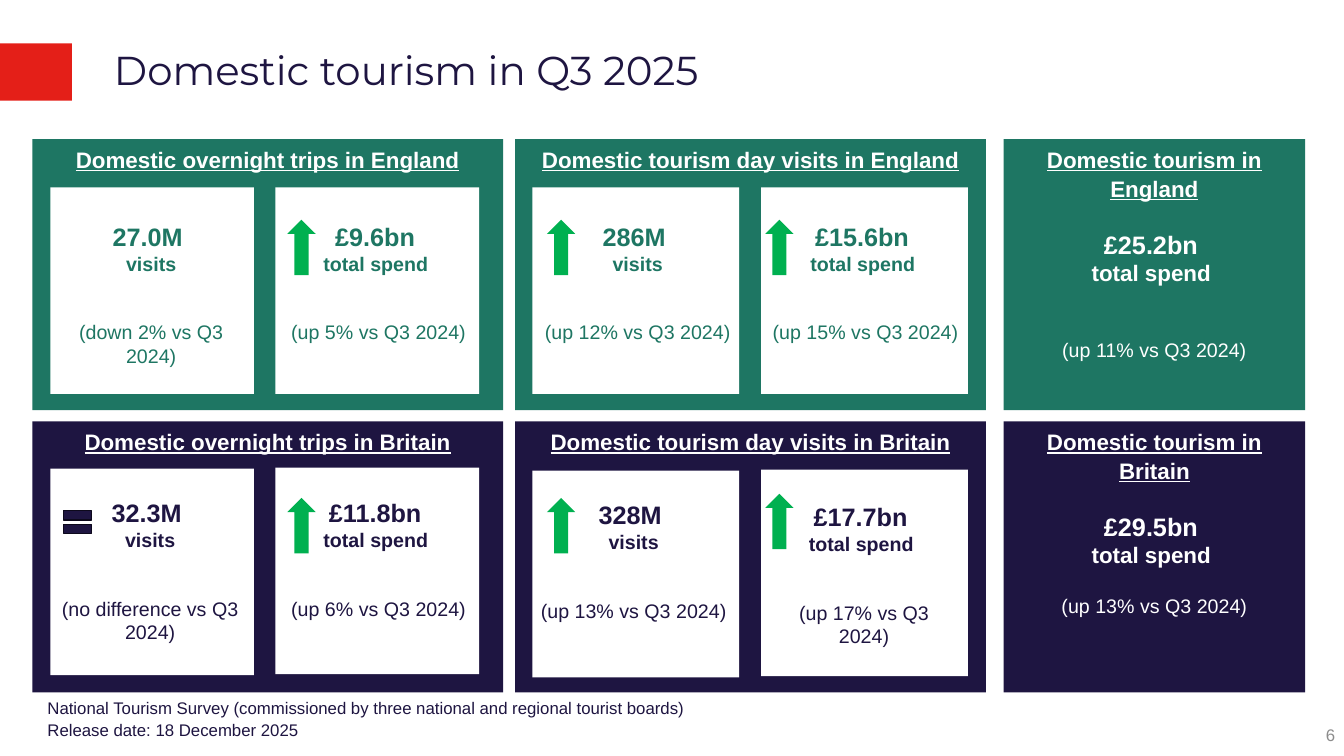
from dataclasses import dataclass

from lxml import etree
from pptx import Presentation
from pptx import util as u
from pptx.dml.color import RGBColor
from pptx.enum import shapes, text
from pptx.oxml.ns import qn

HUES = {"green": "1E7663", "navy": "1E1541", "white": "FFFFFF", "red": "E41F18",
        "arrow": "00B050", "edge": "0D091C", "grey": "8C8C8C"}
WIDE, HIGH = u.Inches(13.33), u.Inches(7.5)
KIND = shapes.MSO_SHAPE
ALIGN, ANCHOR = text.PP_ALIGN, text.MSO_ANCHOR


# All lengths below are percent of the slide's width or height.
@dataclass
class Card:
    value: str
    label: str
    change: str
    top: float
    text_left: float
    text_top: float
    text_wide: float
    sign: str = ""
    sign_top: float = 0


@dataclass
class Panel:
    head: str
    col: int
    cards: tuple[Card, ...] = ()
    value: str = ""
    change: str = ""
    gap: float = 0


@dataclass
class Band:
    hue: str
    top: float
    panels: tuple[Panel, ...]


PANEL_COLS = ((2.4, 35.03), (38.33, 35.03), (74.68, 22.43))
PANEL_HIGH = 35.87
CARD_COLS = ((3.75, 15.15), (20.5, 15.15), (39.61, 15.38), (56.64, 15.38))
CARD_HIGH = 27.33
ARROW_COLS = (4.35, 21.38, 40.7, 56.94)
TEXT_DROP = 3.83

BANDS = (
    Band("green", 18.4, (
        Panel("Domestic overnight trips in England", 0, (
            Card("27.0M ", "visits", "(down 2% vs Q3 2024)", 24.8, 3.75, 24.8, 15),
            Card("£9.6bn ", "total spend ", "(up 5% vs Q3 2024)",
                 24.8, 20.48, 24.8, 15.38, "up", 29.07))),
        Panel("Domestic tourism day visits in England", 1, (
            Card("286M ", "visits", "(up 12% vs Q3 2024)",
                 24.8, 39.61, 24.8, 15.68, "up", 29.07),
            Card("£15.6bn ", "total spend ", "(up 15% vs Q3 2024)",
                 24.8, 56.56, 24.8, 15.68, "up", 29.07))),
        Panel("Domestic tourism in England", 2, value="£25.2bn ",
              change="(up 11% vs Q3 2024)", gap=36.8))),
    Band("navy", 55.73, (
        Panel("Domestic overnight trips in Britain", 0, (
            Card("32.3M ", "visits", "(no difference vs Q3 2024)",
                 62, 3.6, 61.33, 15.15, "same", 66.53),
            Card("£11.8bn ", "total spend ", "(up 6% vs Q3 2024)",
                 61.87, 20.48, 61.33, 15.38, "up", 65.87))),
        Panel("Domestic tourism day visits in Britain", 1, (
            Card("328M ", "visits", "(up 13% vs Q3 2024)",
                 62.27, 39.46, 61.6, 15.38, "up", 65.87),
            Card("£17.7bn ", "total spend ", "(up 17% vs Q3 2024)",
                 62.13, 56.79, 61.87, 15, "up", 65.33))),
        Panel("Domestic tourism in Britain", 2, value="£29.5bn ",
              change="(up 13% vs Q3 2024)", gap=18.4))),
)


def place(left: float, top: float, wide: float, high: float) -> tuple[int, ...]:
    return (int(WIDE * left / 100), int(HIGH * top / 100),
            int(WIDE * wide / 100), int(HIGH * high / 100))


def move(shape, *box: float) -> None:
    shape.left, shape.top, shape.width, shape.height = place(*box)


def write(frame, words: str, *, size: float, hue: str, font: str = "Arial",
          bold: bool = False, under: bool = False, align=ALIGN.CENTER,
          before: float = 0, lead: float = 1, plain: bool = False) -> None:
    para = frame.add_paragraph() if frame.text else frame.paragraphs[0]
    para.alignment, para.line_spacing = align, lead
    para.space_before, para.space_after = u.Pt(before), u.Pt(0)
    if plain:
        props = para._p.get_or_add_pPr()
        props.set("marL", "0")
        props.set("indent", "0")
        etree.SubElement(props, qn("a:buNone"))
    run = para.add_run()
    run.text = words
    run.font.name, run.font.size = font, u.Pt(size)
    run.font.bold, run.font.underline = bold, under
    run.font.color.rgb = RGBColor.from_string(HUES[hue])


def block(slide, kind, hue: str, *box: float, edge: str = ""):
    shape = slide.shapes.add_shape(kind, *place(*box))
    shape.shadow.inherit = False
    shape.fill.solid()
    shape.fill.fore_color.rgb = RGBColor.from_string(HUES[hue])
    if edge:
        shape.line.color.rgb = RGBColor.from_string(HUES[edge])
        shape.line.width = u.Pt(1)
    else:
        shape.line.fill.background()
    return shape


def text_box(slide, *box: float):
    frame = slide.shapes.add_textbox(*place(*box)).text_frame
    frame.word_wrap = True
    return frame


def draw_card(slide, card: Card, col: int, hue: str) -> None:
    left, wide = CARD_COLS[col]
    block(slide, KIND.RECTANGLE, "white", left, card.top, wide, CARD_HIGH)
    frame = text_box(slide, card.text_left, card.text_top + TEXT_DROP,
                     card.text_wide, 18.2)
    write(frame, card.value, size=18, hue=hue, bold=True)
    write(frame, card.label, size=14, hue=hue, bold=True)
    write(frame, card.change, size=14, hue=hue, before=32.2)
    if card.sign == "up":
        block(slide, KIND.UP_ARROW, "arrow", ARROW_COLS[col], card.sign_top, 2.1, 7.33)
    elif card.sign == "same":
        block(slide, KIND.MATH_EQUAL, "navy", ARROW_COLS[col], card.sign_top,
              2.85, 5.07, edge="edge")


def draw_panel(slide, panel: Panel, band: Band) -> None:
    left, wide = PANEL_COLS[panel.col]
    frame = block(slide, KIND.RECTANGLE, band.hue, left, band.top,
                  wide, PANEL_HIGH).text_frame
    frame.word_wrap, frame.vertical_anchor = True, ANCHOR.TOP
    write(frame, panel.head, size=16, hue="white", bold=True, under=True, lead=1.07)
    if panel.value:
        write(frame, panel.value, size=18, hue="white", bold=True, before=19.7)
        write(frame, "total spend ", size=16, hue="white", bold=True)
        write(frame, panel.change, size=14, hue="white", before=panel.gap)
    for spot, card in enumerate(panel.cards):
        draw_card(slide, card, panel.col * 2 + spot, band.hue)


def main() -> None:
    deck = Presentation()
    deck.slide_width, deck.slide_height = WIDE, HIGH
    slide = deck.slides.add_slide(deck.slide_layouts[1])

    # Title and red tab
    block(slide, KIND.RECTANGLE, "red", 0, 5.73, 5.35, 7.6)
    title = slide.shapes.title
    move(title, 7.73, 5.73, 92.2, 7.6)
    title.text_frame.auto_size = text.MSO_AUTO_SIZE.NONE
    title.text_frame.vertical_anchor = ANCHOR.MIDDLE
    write(title.text_frame, "Domestic tourism in Q3 2025", size=28.8, hue="navy",
          font="Montserrat", align=ALIGN.LEFT, lead=0.9)

    # England and Britain bands
    for band in BANDS:
        for panel in band.panels:
            draw_panel(slide, panel, band)

    # Source note
    note = slide.placeholders[1]
    move(note, 2.78, 92.27, 91.07, 5.6)
    frame = note.text_frame
    frame.auto_size = text.MSO_AUTO_SIZE.NONE
    frame.vertical_anchor = ANCHOR.BOTTOM
    frame.margin_top = frame.margin_bottom = 0
    lines = ("National Tourism Survey (commissioned by three national "
             "and regional tourist boards)", "Release date: 18 December 2025")
    for spot, line in enumerate(lines):
        write(frame, line, size=12, hue="navy", align=ALIGN.LEFT,
              before=1.2 * spot, plain=True)

    # Page number
    frame = text_box(slide, 73.22, 94.53, 26.86, 5.33)
    frame.vertical_anchor = ANCHOR.MIDDLE
    write(frame, "6", size=12, hue="grey", align=ALIGN.RIGHT)

    deck.save("out.pptx")


if __name__ == "__main__":
    main()
